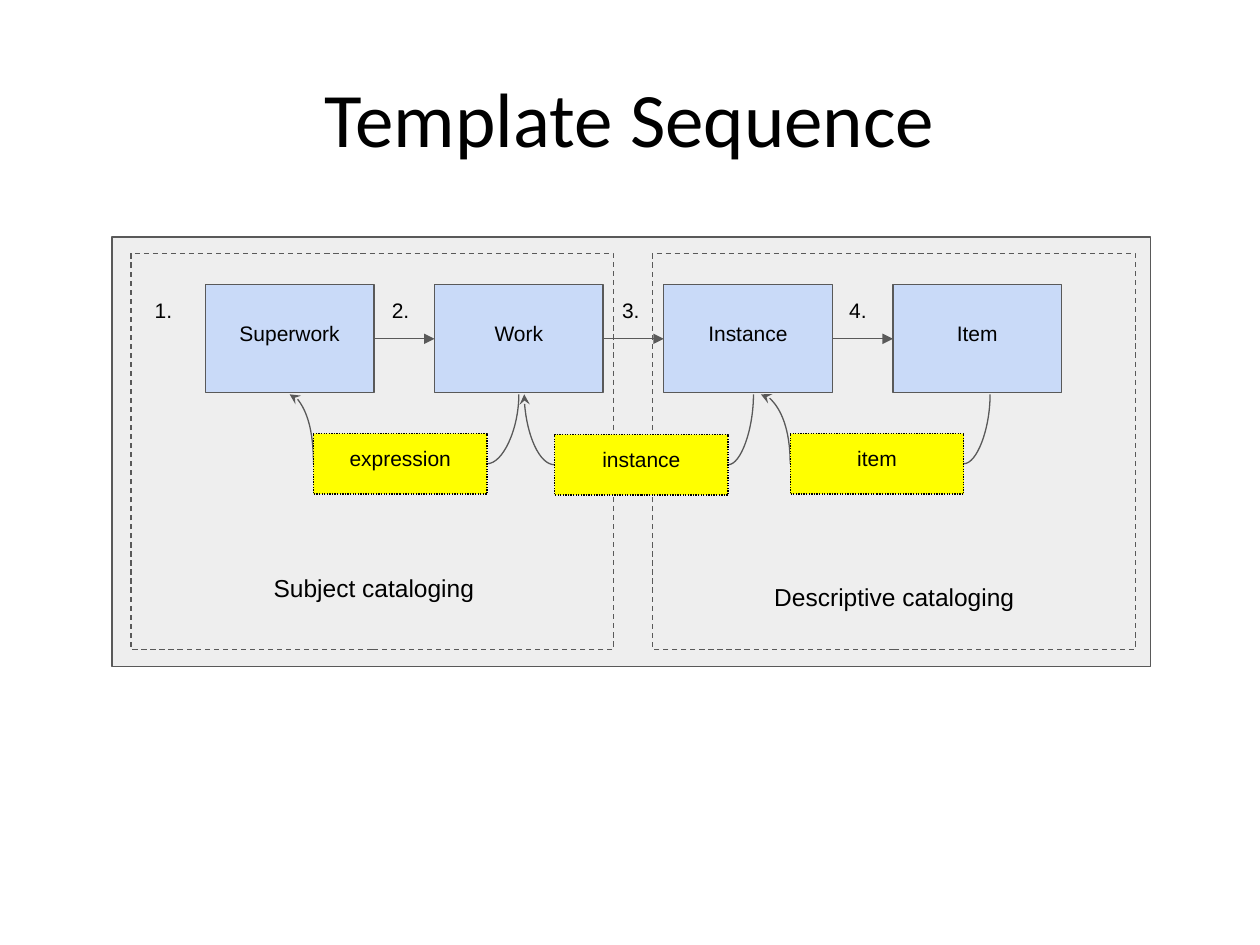
import pptx
import pptx.util
import pptx.dml.color
import pptx.enum.dml
import pptx.enum.shapes
import pptx.enum.text
import pptx.oxml.ns
from lxml import etree

Cm = pptx.util.Cm
Pt = pptx.util.Pt
RGBColor = pptx.dml.color.RGBColor
qn = pptx.oxml.ns.qn
DASH = pptx.enum.dml.MSO_LINE
CONNECTOR = pptx.enum.shapes.MSO_CONNECTOR
ALIGN = pptx.enum.text.PP_ALIGN
ANCHOR = pptx.enum.text.MSO_ANCHOR

BLACK = RGBColor(0x00, 0x00, 0x00)
GREY = RGBColor(0x59, 0x59, 0x59)
PANEL = RGBColor(0xEE, 0xEE, 0xEE)
BLUE = RGBColor(0xC9, 0xDA, 0xF8)
YELLOW = RGBColor(0xFF, 0xFF, 0x00)

# Row of template boxes
BOX_LEFT, BOX_TOP, BOX_WIDTH, BOX_HEIGHT = 4.14, 5.74, 3.4, 2.18
BOX_PITCH = 4.62
BOX_BOTTOM = BOX_TOP + BOX_HEIGHT + 0.03
ARROW_Y = 6.83

# Relation labels below the boxes
LABEL_WIDTH, LABEL_HEIGHT = 3.5, 1.22


def write(frame, text, size, align, font="Arial"):
    para = frame.paragraphs[0]
    para.alignment = align
    span = para.add_run()
    span.text = text
    span.font.size = Pt(size)
    span.font.name = font
    span.font.color.rgb = BLACK


def write_in_shape(shape, text, size, align):
    frame = shape.text_frame
    frame.word_wrap = True
    frame.vertical_anchor = ANCHOR.TOP
    frame.margin_left = frame.margin_right = Cm(0.25)
    frame.margin_top = frame.margin_bottom = Cm(0.25)
    write(frame, text, size, align)


def add_box(page, left, top, width, height, fill=None, line=GREY, dash=None):
    box = page.shapes.add_shape(
        pptx.enum.shapes.MSO_SHAPE.RECTANGLE,
        Cm(left), Cm(top), Cm(width), Cm(height))
    box.shadow.inherit = False
    if fill is None:
        box.fill.background()
    else:
        box.fill.solid()
        box.fill.fore_color.rgb = fill
    box.line.color.rgb = line
    box.line.width = Pt(0.75)
    if dash is not None:
        box.line.dash_style = dash
    return box


def add_text(page, left, top, width, height, text, size=12, align=ALIGN.CENTER):
    box = page.shapes.add_textbox(Cm(left), Cm(top), Cm(width), Cm(height))
    write_in_shape(box, text, size, align)


def add_line(page, kind, start, end, head=None, tail=None):
    line = page.shapes.add_connector(
        kind, Cm(start[0]), Cm(start[1]), Cm(end[0]), Cm(end[1]))
    line.line.color.rgb = GREY
    line.line.width = Pt(0.75)
    outline = line.line._get_or_add_ln()
    for tag, arrow in (("a:headEnd", head), ("a:tailEnd", tail)):
        if arrow:
            etree.SubElement(outline, qn(tag)).set("type", arrow)
    properties = line._element.spPr
    etree.SubElement(properties, qn("a:effectLst"))
    if kind == CONNECTOR.CURVE:
        # Quarter curve: leaves horizontally, arrives vertically
        properties.find(qn("a:prstGeom")).set("prst", "curvedConnector2")


def add_title(page, text):
    title = page.shapes.title
    title.left, title.top = Cm(1.27), Cm(0.76)
    title.width, title.height = Cm(22.86), Cm(3.18)
    title.text_frame.vertical_anchor = ANCHOR.MIDDLE
    write(title.text_frame, text, 44, ALIGN.CENTER, "Calibri")


def add_panels(page):
    add_box(page, 2.26, 4.78, 20.93, 8.66, PANEL)
    for left in (13.16, 2.64):
        add_box(page, left, 5.11, 9.73, 7.98, dash=DASH.DASH)
    for left, top, text in ((3.91, 11.3, "Subject cataloging"),
                            (14.4, 11.48, "Descriptive cataloging")):
        add_text(page, left, top, 7.26, 1.4, text, 14)


def add_sequence(page):
    names = ("Superwork", "Work", "Instance", "Item")
    number_lefts = (2.87, 7.65, 12.29, 16.87)
    for index, (name, number_left) in enumerate(zip(names, number_lefts)):
        left = BOX_LEFT + index * BOX_PITCH
        add_box(page, left, BOX_TOP, BOX_WIDTH, BOX_HEIGHT, BLUE)
        add_text(page, left, 6.22, BOX_WIDTH, 1.22, name)
        add_text(page, number_left, BOX_TOP, 1.04, 1.04,
                 f"{index + 1}.", align=ALIGN.LEFT)
        if index:
            add_line(page, CONNECTOR.STRAIGHT,
                     (left - BOX_PITCH + BOX_WIDTH, ARROW_Y),
                     (left, ARROW_Y), tail="triangle")


def add_relation(page, text, left, top, target_x, source_x, upright=False):
    middle = top + LABEL_HEIGHT / 2
    target, label_side = (target_x, BOX_BOTTOM), (left, middle)
    # Arrow to the earlier box, arriving upright or sideways
    if upright:
        add_line(page, CONNECTOR.CURVE, label_side, target, tail="stealth")
    else:
        add_line(page, CONNECTOR.CURVE, target, label_side, head="stealth")
    # Plain curve to the later box
    add_line(page, CONNECTOR.CURVE, (left + LABEL_WIDTH, middle),
             (source_x, BOX_BOTTOM))
    label = add_box(page, left, top, LABEL_WIDTH, LABEL_HEIGHT,
                    YELLOW, BLACK, DASH.ROUND_DOT)
    write_in_shape(label, text, 12, ALIGN.CENTER)


def main():
    deck = pptx.Presentation()
    deck.slide_width, deck.slide_height = Cm(25.4), Cm(19.05)
    page = deck.slides.add_slide(deck.slide_layouts[5])
    add_title(page, "Template Sequence")
    add_panels(page)
    add_sequence(page)
    add_relation(page, "expression", 6.32, 8.74, 5.84, 10.46)
    add_relation(page, "item", 15.93, 8.74, 15.34, 19.96)
    add_relation(page, "instance", 11.18, 8.76, 10.57, 15.19, upright=True)
    deck.save("out.pptx")


if __name__ == "__main__":
    main()
